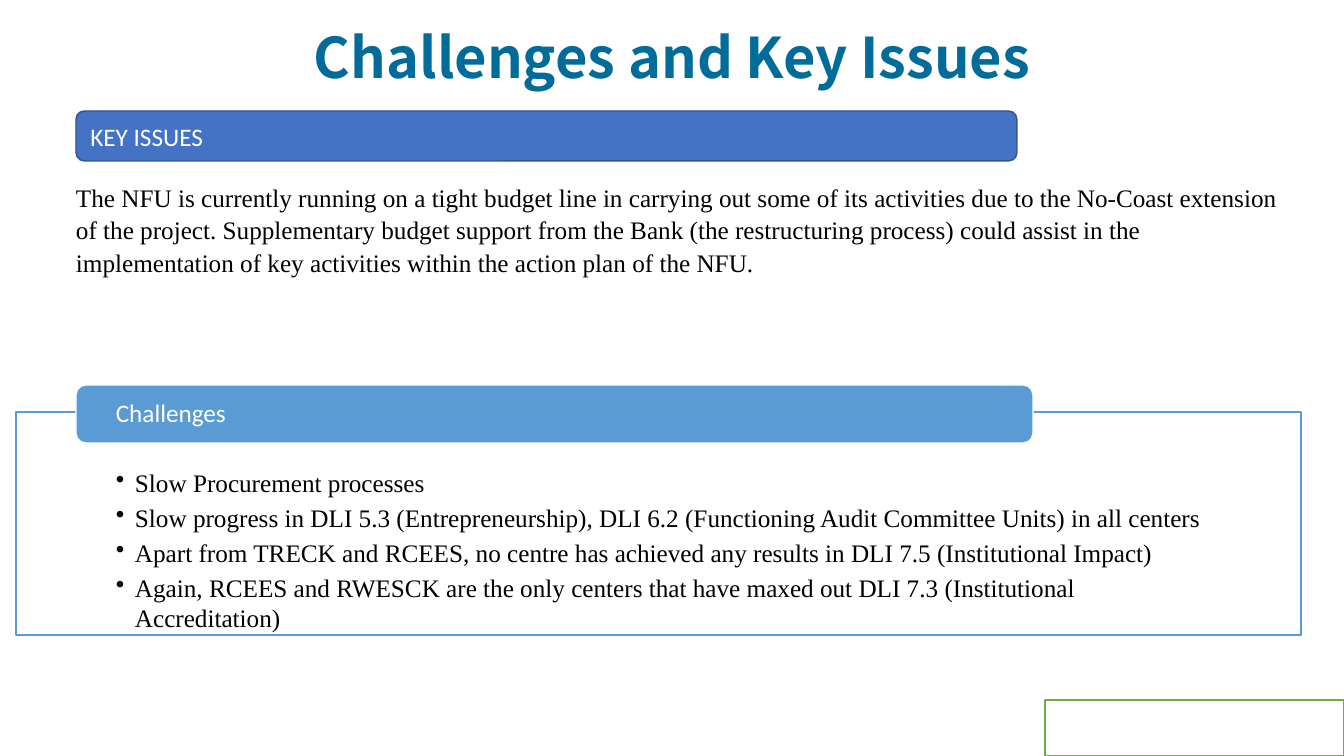
from lxml import etree
from pptx import Presentation
from pptx.dml.color import RGBColor
from pptx.enum.shapes import MSO_SHAPE
from pptx.enum.text import MSO_ANCHOR, PP_ALIGN
from pptx.oxml.ns import qn
from pptx.util import Emu, Pt

RECTANGLE = MSO_SHAPE.RECTANGLE
ROUNDED = MSO_SHAPE.ROUNDED_RECTANGLE
TOP, MIDDLE = MSO_ANCHOR.TOP, MSO_ANCHOR.MIDDLE
LEFT, CENTER = PP_ALIGN.LEFT, PP_ALIGN.CENTER

PX = 914400 / 100.8
THEME = {
    "white": "FFFFFF", "black": "000000", "title": "016B9A",
    "issues": "4472C4", "issues_line": "325491",
    "challenges": "5B9BD5", "footer_line": "70AD47",
    "title_font": "Noto Sans CJK SC", "label_font": "Calibri",
    "body_font": "Times New Roman", "title_size": 40, "body_size": 18,
}

BUDGET = (
    "The NFU is currently running on a tight budget line in carrying out some of its "
    "activities due to the No-Coast extension of the project. Supplementary budget support "
    "from the Bank (the restructuring process) could assist in the implementation of key "
    "activities within the action plan of the NFU."
)
CHALLENGES = [
    "Slow Procurement processes",
    "Slow progress in DLI 5.3 (Entrepreneurship), DLI 6.2 (Functioning Audit Committee Units) in all centers",
    "Apart from TRECK and RCEES, no centre has achieved any results in DLI 7.5 (Institutional Impact)",
    "Again, RCEES and RWESCK are the only centers that have maxed out DLI 7.3 (Institutional Accreditation)",
]


def add_box(kind, bounds, fill, line):
    shape = slide.shapes.add_shape(kind, *[Emu(round(n * PX)) for n in bounds])
    shape.shadow.inherit = False
    shape.fill.solid()
    shape.fill.fore_color.rgb = RGBColor.from_string(THEME[fill])
    shape.line.color.rgb = RGBColor.from_string(THEME[line])
    shape.line.width = Pt(1)
    return shape


def write(shape, texts, font, color, insets=(10, 5, 10, 5), anchor=MIDDLE,
          align=LEFT, size="body_size", bold=False):
    frame = shape.text_frame
    frame.word_wrap = True
    frame.vertical_anchor = anchor
    (frame.margin_left, frame.margin_top,
     frame.margin_right, frame.margin_bottom) = [Emu(round(n * PX)) for n in insets]
    for index, text in enumerate(texts):
        paragraph = frame.add_paragraph() if index else frame.paragraphs[0]
        paragraph.alignment = align
        run = paragraph.add_run()
        run.text = text
        run.font.name = THEME[font]
        run.font.size = Pt(THEME[size])
        run.font.bold = bold
        run.font.color.rgb = RGBColor.from_string(THEME[color])
    return frame.paragraphs


presentation = Presentation()
presentation.slide_width = Emu(round(1344 * PX))
presentation.slide_height = Emu(round(756 * PX))
slide = presentation.slides.add_slide(presentation.slide_layouts[5])

title = slide.shapes.title
title.left, title.top, title.width, title.height = [
    Emu(round(n * PX)) for n in (150, 21, 1044, 78)]
title_paragraphs = write(title, ["Challenges and Key Issues"], "title_font", "title",
                         align=CENTER, size="title_size", bold=True)
title_paragraphs[0].line_spacing = 0.9

challenges_box = add_box(RECTANGLE, (16, 412, 1285, 223), "white", "challenges")
bullets = write(challenges_box, CHALLENGES, "body_font", "black",
                insets=(100, 55, 100, 14), anchor=TOP)
for paragraph in bullets:
    paragraph.space_after = Pt(3.5)
    properties = paragraph._p.get_or_add_pPr()
    properties.set("marL", str(round(19 * PX)))
    properties.set("indent", str(round(-19 * PX)))
    etree.SubElement(properties, qn("a:buChar")).set("char", "•")

challenges_label = add_box(ROUNDED, (76, 385, 957, 58), "challenges", "white")
write(challenges_label, ["Challenges"], "label_font", "white", insets=(37, 0, 37, 3))

issues_label = add_box(ROUNDED, (76, 111, 941, 50), "issues", "issues_line")
write(issues_label, ["KEY ISSUES"], "label_font", "white", insets=(12, 5, 10, 5))

budget_box = slide.shapes.add_textbox(
    *[Emu(round(n * PX)) for n in (16, 175, 1285, 107)])
budget = write(budget_box, [BUDGET], "body_font", "black", anchor=TOP)[0]
budget.line_spacing = 1.07
budget.space_after = Pt(8)
budget._p.get_or_add_pPr().set("marL", str(round(50 * PX)))

add_box(RECTANGLE, (1045, 700, 299, 56), "white", "footer_line")

presentation.save("out.pptx")
